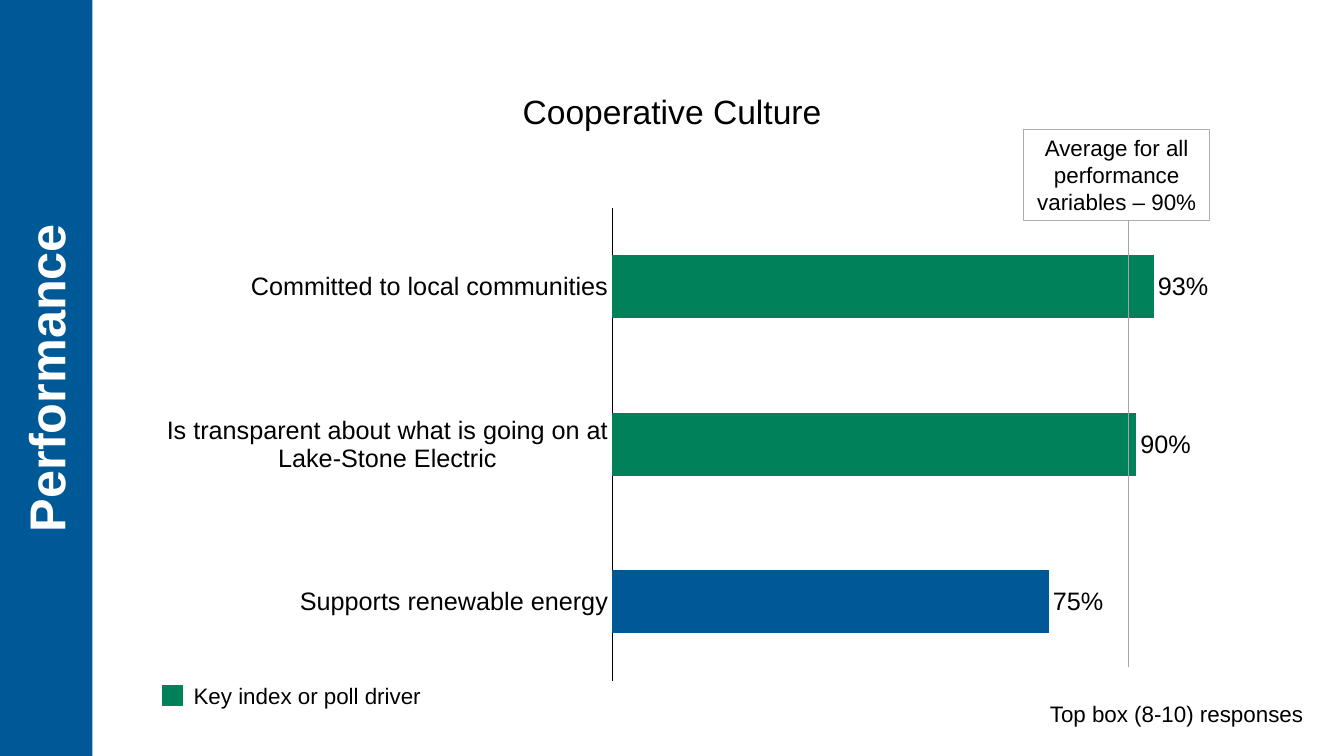
from lxml.etree import SubElement
from pptx import Presentation
from pptx.chart.data import CategoryChartData
from pptx.dml.color import RGBColor
from pptx.enum.chart import XL_CHART_TYPE, XL_LABEL_POSITION, XL_TICK_MARK
from pptx.enum.shapes import MSO_CONNECTOR, MSO_SHAPE
from pptx.enum.text import MSO_ANCHOR, MSO_AUTO_SIZE, PP_ALIGN
from pptx.oxml import parse_xml
from pptx.oxml.ns import nsdecls, qn
from pptx.util import Pt

BLUE, GREEN, BLACK, WHITE = "005997", "00815A", "000000", "FFFFFF"
FONT = "Arial"
SCALE = 9525


def px(*vals):
    return [round(v * SCALE) for v in vals]


def tint(code):
    return RGBColor.from_string(code)


def assign(item, **vals):
    for key, val in vals.items():
        setattr(item, key, val)


class Deck:
    def __init__(self, width, height):
        self.prs = Presentation()
        assign(self.prs, **dict(zip(("slide_width", "slide_height"), px(width, height))))
        self.slide = self.prs.slides.add_slide(self.prs.slide_layouts[5])
        self.shapes = self.slide.shapes

    def style(self, font, size, color=BLACK, bold=False):
        assign(font, name=FONT, size=Pt(size), bold=bold)
        font.color.rgb = tint(color)

    def fill_text(self, shape, text, size, color=BLACK, bold=False,
                  align=PP_ALIGN.CENTER, anchor=MSO_ANCHOR.TOP):
        frame = shape.text_frame
        frame.text = text
        assign(frame, word_wrap=True, auto_size=MSO_AUTO_SIZE.NONE, vertical_anchor=anchor)
        par = frame.paragraphs[0]
        assign(par, alignment=align)
        self.style(par.runs[0].font, size, color, bold)

    def title(self, text, box, size):
        shape = self.shapes.title
        assign(shape, **dict(zip(("left", "top", "width", "height"), px(*box))))
        self.fill_text(shape, text, size)

    def label(self, text, box, size, **form):
        self.fill_text(self.shapes.add_textbox(*px(*box)), text, size, **form)

    def rect(self, box, fill=None, line=None, weight=1):
        shape = self.shapes.add_shape(MSO_SHAPE.RECTANGLE, *px(*box))
        shape.shadow.inherit = False
        if fill:
            shape.fill.solid()
            shape.fill.fore_color.rgb = tint(fill)
        else:
            shape.fill.background()
        if line:
            shape.line.color.rgb = tint(line)
            shape.line.width = Pt(weight)
        else:
            shape.line.fill.background()
        return shape

    def rule(self, ends, color, weight):
        line = self.shapes.add_connector(MSO_CONNECTOR.STRAIGHT, *px(*ends))
        line.line.color.rgb = tint(color)
        line.line.width = Pt(weight)
        SubElement(line._element.spPr, qn("a:effectLst"))

    def bars(self, scores, box, plot, keys):
        """Draw a bar per score; the first few, counted by keys, are drivers."""
        data = CategoryChartData(number_format="0%")
        data.categories = list(scores)
        data.add_series("Series 1", list(scores.values()))
        chart = self.shapes.add_chart(XL_CHART_TYPE.BAR_CLUSTERED, *px(*box), data).chart
        assign(chart, has_legend=False, has_title=False)
        self.style(chart.font, 18)

        axis = chart.category_axis
        assign(axis, reverse_order=True, has_major_gridlines=False,
               major_tick_mark=XL_TICK_MARK.NONE, minor_tick_mark=XL_TICK_MARK.NONE)
        axis.format.line.color.rgb = tint(BLACK)
        axis.format.line.width = Pt(0.28)
        assign(chart.value_axis, minimum_scale=0, maximum_scale=1, major_unit=0.2,
               has_major_gridlines=False, visible=False)

        group = chart.plots[0]
        assign(group, gap_width=150, vary_by_categories=False, has_data_labels=True)
        tags = group.data_labels
        assign(tags, show_value=True, number_format="0%", number_format_is_linked=False,
               position=XL_LABEL_POSITION.OUTSIDE_END)
        self.style(tags.font, 18)
        row = group.series[0]
        fills = [row.format.fill] + [row.points[i].format.fill for i in range(keys)]
        for fill, color in zip(fills, [BLUE] + [GREEN] * keys):
            fill.solid()
            fill.fore_color.rgb = tint(color)
        self.place(chart, plot)

    def place(self, chart, plot):
        """Fix the inner plot area as fractions of the chart."""
        area = chart._chartSpace.chart.plotArea
        for old in area.findall(qn("c:layout")):
            area.remove(old)
        modes = "".join(f'<c:{k}Mode val="edge"/>' for k in "xy")
        sizes = "".join(f'<c:{k} val="{v}"/>' for k, v in zip("xywh", plot))
        area.insert(0, parse_xml(
            f'<c:layout {nsdecls("c")}><c:manualLayout><c:layoutTarget val="inner"/>'
            f'{modes}{sizes}</c:manualLayout></c:layout>'))

    def band(self, text, width, height):
        """Fill the left edge with a strip whose text reads upwards."""
        box = ((width - height) // 2, (height - width) // 2, height, width)
        shape = self.rect(box, BLUE)
        shape.rotation = 270
        self.fill_text(shape, text, 36, WHITE, True, anchor=MSO_ANCHOR.MIDDLE)
        assign(shape.text_frame, margin_top=0, margin_bottom=px(2)[0])


def main():
    deck = Deck(1280, 720)
    deck.title("Cooperative Culture", (200, 82, 880, 48), 24)
    scores = {
        "Committed to local communities": 0.93,
        "Is transparent about what is going on at Lake-Stone Electric": 0.9,
        "Supports renewable energy": 0.75,
    }
    deck.bars(scores, (149, 189, 1009, 464), (0.43, 0.02, 0.55, 0.97), keys=2)
    deck.rule((1075, 210, 1075, 635), "A5A5A5", 1)
    note = deck.rect((975, 123, 177, 87), line="AFABAB", weight=0.75)
    deck.fill_text(note, "Average for all performance variables – 90%", 16)
    deck.label("Top box (8-10) responses", (988, 662, 265, 36), 16)
    deck.label("Key index or poll driver", (175, 645, 510, 36), 16, align=PP_ALIGN.LEFT)
    deck.rect((155, 653, 19, 19), GREEN, GREEN)
    deck.band("Performance", 88, 720)
    deck.prs.save("out.pptx")


if __name__ == "__main__":
    main()
